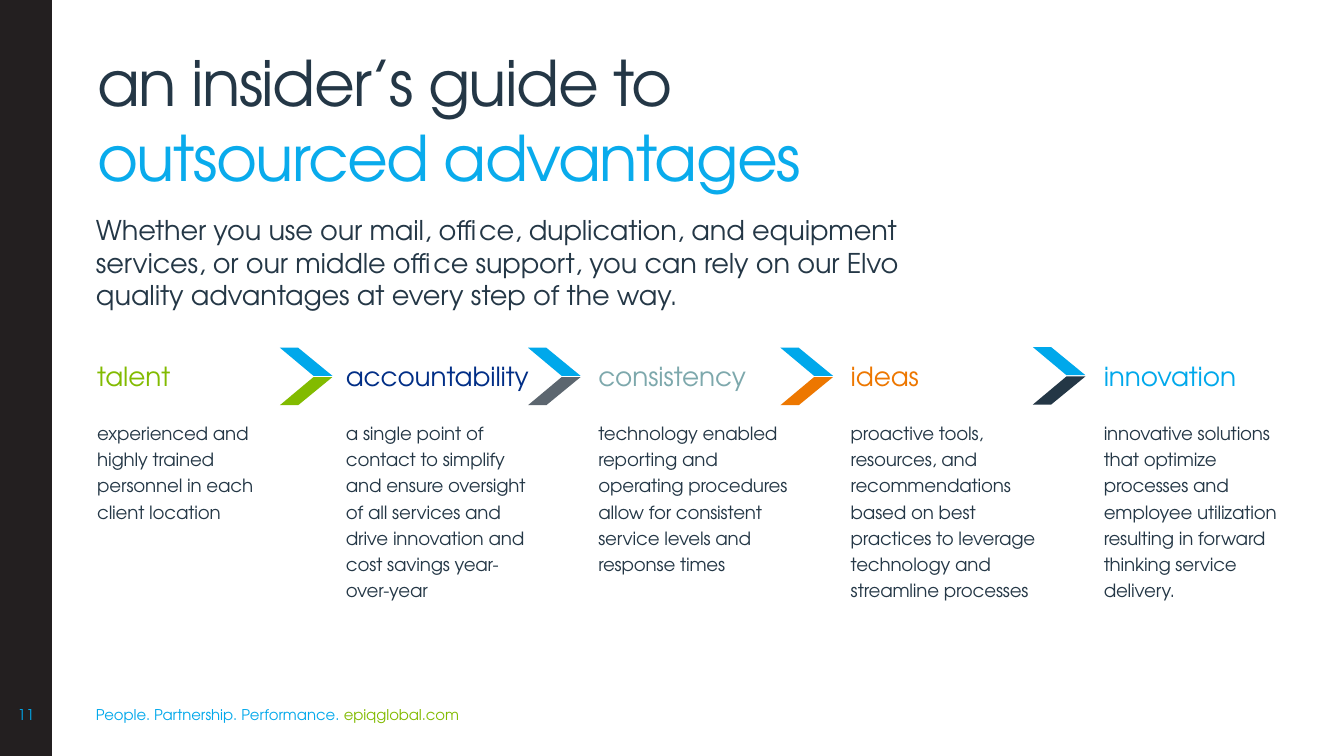
from pptx import Presentation
from pptx.dml.color import RGBColor
from pptx.enum import text
from pptx.util import Inches, Pt

FACE = "TeX Gyre Adventor"
NAVY, BLUE, GREEN, BLACK = "243746", "00A8EB", "82BB00", "231F20"

ADVANTAGES = [
    (1.59, "talent", GREEN,
     "experienced and highly trained personnel in each client location"),
    (5.66, "accountability", "012E86",
     "a single point of contact to simplify and ensure oversight of all services "
     "and drive innovation and cost savings year-over-year"),
    (9.79, "consistency", "7DA8AC",
     "technology enabled reporting and operating procedures allow for consistent "
     "service levels and response times"),
    (13.92, "ideas", "ED7700",
     "proactive tools, resources, and recommendations based on best practices "
     "to leverage technology and streamline processes"),
    (18.06, "innovation", BLUE,
     "innovative solutions that optimize processes and employee utilization "
     "resulting in forward thinking service delivery."),
]
CHEVRONS = [
    (4.58, 5.69, GREEN),
    (8.64, 5.69, "5C666F"),
    (12.77, 5.69, "ED7700"),
    (16.9, 5.68, NAVY),
]


def rgb(value):
    return RGBColor.from_string(value)


def add_box(slide, left, top, width, height):
    frame = slide.shapes.add_textbox(
        Inches(left), Inches(top), Inches(width), Inches(height)).text_frame
    frame.margin_left = frame.margin_right = 0
    frame.margin_top = frame.margin_bottom = 0
    frame.word_wrap = True
    frame.auto_size = text.MSO_AUTO_SIZE.SHAPE_TO_FIT_TEXT
    return frame


def write(paragraph, content, size, color, tracking=0):
    run = paragraph.add_run()
    run.text = content
    run.font.name = FACE
    run.font.size = Pt(size)
    run.font.color.rgb = rgb(color)
    run.font._element.set("spc", str(round(tracking * 100)))


def add_polygon(shapes, points, color):
    corners = [(Inches(x), Inches(y)) for x, y in points]
    builder = shapes.build_freeform(*corners[0])
    builder.add_line_segments(corners[1:], close=True)
    polygon = builder.convert_to_shape()
    polygon.shadow.inherit = False
    polygon.fill.solid()
    polygon.fill.fore_color.rgb = rgb(color)
    polygon.line.fill.background()


def add_chevron(slide, left, top, color):
    group = slide.shapes.add_group_shape()
    for tip, end, fill in ((0.48, 0.94, color), (0.46, 0, BLUE)):
        points = [(0.86, tip), (0.55, tip), (0, end), (0.3, end)]
        add_polygon(group.shapes, [(left + x, top + y) for x, y in points], fill)


def add_advantage(slide, left, name, color, detail):
    frame = add_box(slide, left, 5.9, 3.17, 3.98)
    heading = frame.paragraphs[0]
    heading.space_after = Pt(12)
    write(heading, name, size=31, color=color, tracking=-0.1)
    body = frame.add_paragraph()
    body.line_spacing = 1.2
    body.space_before = Pt(18)
    write(body, detail, size=21.5, color=NAVY, tracking=-0.2)


def add_title(slide):
    title = add_box(slide, 1.59, 0.73, 18.8, 2.47).paragraphs[0]
    title.line_spacing = Pt(88.3)
    write(title, "an insider’s guide to", size=74, color=NAVY, tracking=-1.8)
    title.add_line_break()
    write(title, "outsourced advantages", size=74, color="09ABEC", tracking=-1.8)


def add_footer(slide):
    tagline = add_box(slide, 1.57, 11.57, 6.03, 0.27).paragraphs[0]
    tagline.line_spacing = Pt(19)
    for content, color, tracking in (
            ("People. Partnership. ", BLUE, -0.1),
            ("Performance. ", BLUE, 0),
            ("epiqglobal.com", GREEN, -0.1)):
        write(tagline, content, size=17.5, color=color, tracking=tracking)
    number = add_box(slide, 0, 11.55, 0.85, 0.3).paragraphs[0]
    number.alignment = text.PP_ALIGN.CENTER
    write(number, "11", size=17.5, color=BLUE, tracking=0.2)


def main():
    deck = Presentation()
    deck.slide_width, deck.slide_height = Inches(21.99), Inches(12.37)
    slide = deck.slides.add_slide(deck.slide_layouts[6])
    add_polygon(slide.shapes, [(0, 0), (0.85, 0), (0.85, 12.37), (0, 12.37)], BLACK)
    add_title(slide)
    intro = add_box(slide, 1.57, 3.49, 13.23, 1.62).paragraphs[0]
    write(intro, "Whether you use our mail, office, duplication, and equipment "
          "services, or our middle office support, you can rely on our Elvo "
          "quality advantages at every step of the way.",
          size=32, color=NAVY, tracking=-0.2)
    for advantage in ADVANTAGES:
        add_advantage(slide, *advantage)
    for chevron in CHEVRONS:
        add_chevron(slide, *chevron)
    add_footer(slide)
    deck.save("out.pptx")


if __name__ == "__main__":
    main()
